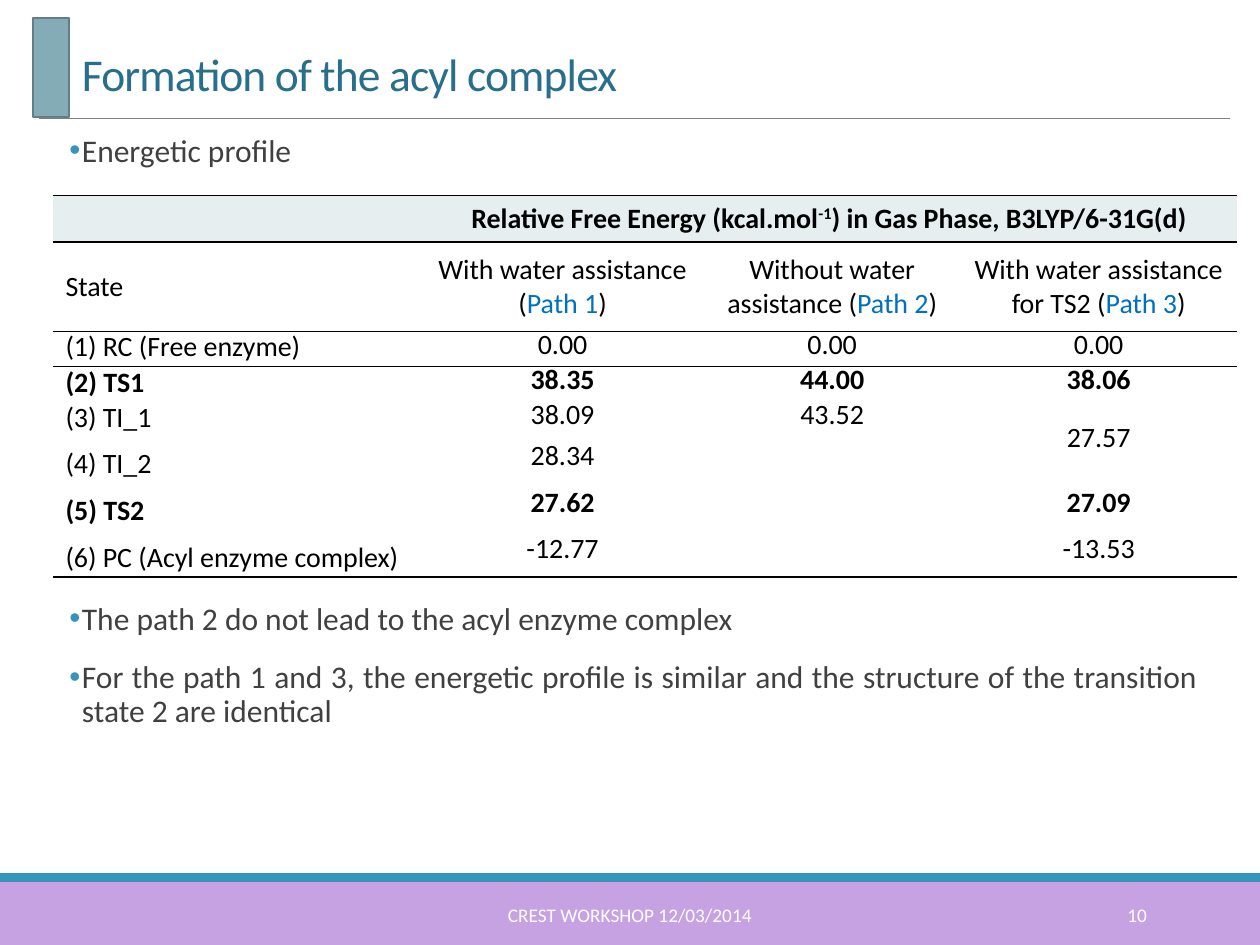
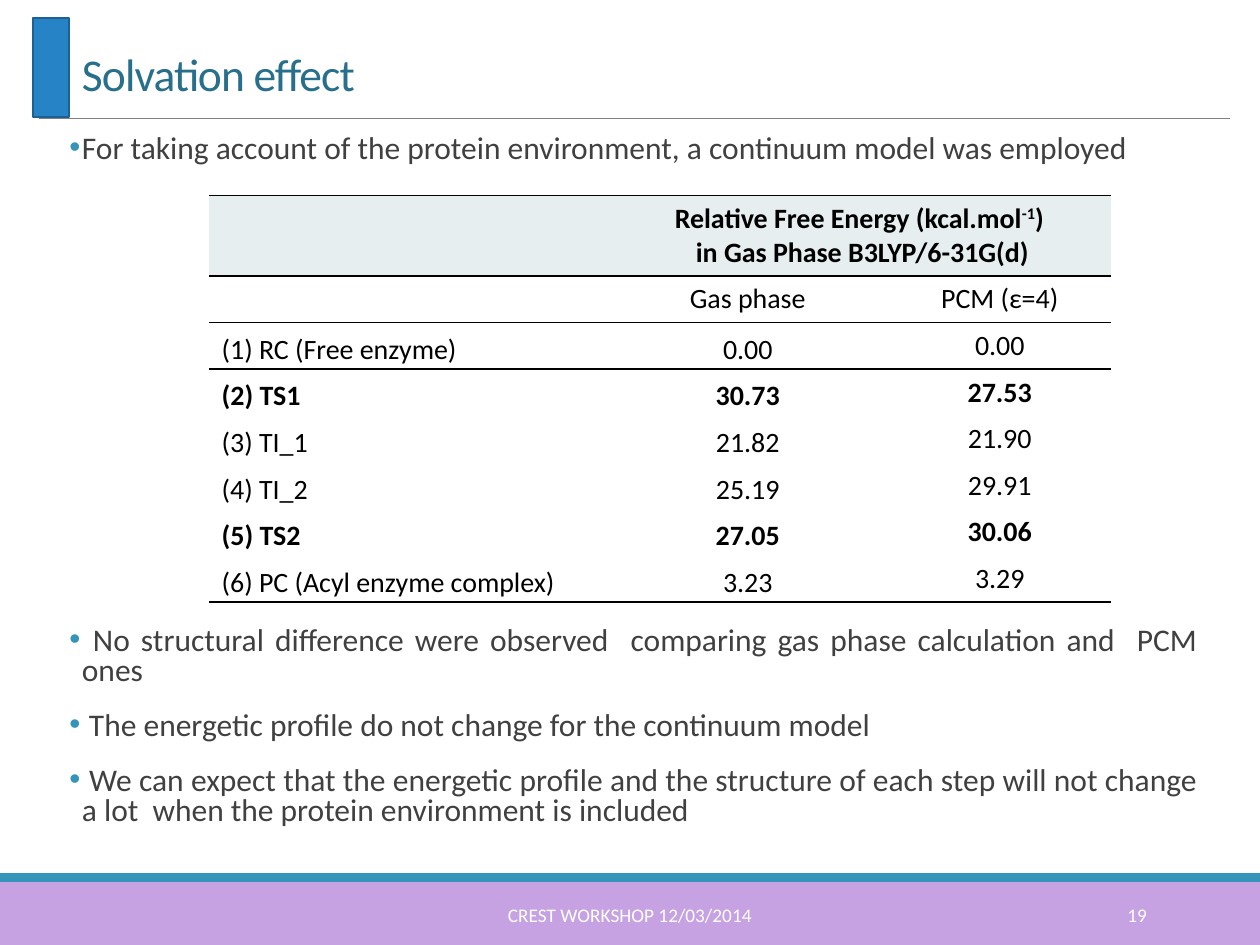
"""Build two slides on the energy profile of an acyl enzyme complex."""
from lxml.etree import SubElement
from pptx import Presentation
from pptx.dml.color import RGBColor
from pptx.enum.shapes import MSO_CONNECTOR, MSO_SHAPE
from pptx.enum.text import MSO_ANCHOR as ANCHOR, MSO_AUTO_SIZE, PP_ALIGN as ALIGN
from pptx.oxml.ns import qn
from pptx.util import Inches, Pt

FONT = "Calibri"
TITLE, BODY, BLACK, WHITE = "276F8B", "404040", "000000", "FFFFFF"
BLUE, PURPLE, GREY = "3494BA", "C7A2E3", "808080"
PATH_BLUE, HEADER_FILL = "0070C0", "E6EEF0"
NO_GRID_STYLE = "{2D5ABB26-0587-4C30-8999-92F81FD0307C}"
FOOTER = "CREST WORKSHOP 12/03/2014"


def color(hex_code):
    """Turn a hex string into a colour."""
    return RGBColor.from_string(hex_code)


def add_run(paragraph, text, size, hex_code, bold=False):
    """Add one formatted run and return it."""
    run = paragraph.add_run()
    run.text = text
    run.font.name, run.font.size, run.font.bold = FONT, Pt(size), bold
    run.font.color.rgb = color(hex_code)
    return run


slides = [
    {
        "title": "Formation of the acyl complex",
        "number": "10",
        "tab": ("84ACB6", "627F87"),
        "line_spacing": 0.9,
        "table_gap": 246,
        "bullets": [
            "Energetic profile",
            "The path 2 do not lead to the acyl enzyme complex",
            "For the path 1 and 3, the energetic profile is similar and the "
            "structure of the transition state 2 are identical",
        ],
        "table_left": 0.42,
        "columns": [(2.92, ANCHOR.BOTTOM, 0.5), (2.25, ANCHOR.MIDDLE, 0.5),
                    (2.03, ANCHOR.MIDDLE, 0.5), (2.2, ANCHOR.MIDDLE, 0.5)],
        "heights": [0.37, 0.71] + [0.28] * 3 + [0.37] * 3,
        "header": [["Relative Free Energy (kcal.mol", "-1", ") in Gas Phase, B3LYP/6-31G(d)"]],
        "subheads": [["State"],
                     ["With water assistance (", "Path 1", ")"],
                     ["Without water assistance (", "Path 2", ")"],
                     ["With water assistance for TS2 (", "Path 3", ")"]],
        "states": [
            ("(1) RC (Free enzyme)", "0.00", "0.00", "0.00"),
            ("(2) TS1", "38.35", "44.00", "38.06"),
            ("(3) TI_1", "38.09", "43.52", "27.57"),
            ("(4) TI_2", "28.34", "", ""),
            ("(5) TS2", "27.62", "", "27.09"),
            ("(6) PC (Acyl enzyme complex)", "-12.77", "", "-13.53"),
        ],
        "merges": [((0, 1), (0, 3)), ((4, 3), (5, 3))],
    },
    {
        "title": "Solvation effect",
        "number": "19",
        "tab": ("2683C6", "1C6192"),
        "line_spacing": 0.8,
        "table_gap": 262,
        "bullets": [
            "For taking account of the protein environment, a continuum model was employed",
            " No structural difference were observed  comparing gas phase calculation and  PCM ones",
            " The energetic profile do not change for the continuum model",
            " We can expect that the energetic profile and the structure of each step "
            "will not change a lot  when the protein environment is included",
        ],
        "table_left": 1.66,
        "columns": [(3.16, ANCHOR.BOTTOM, 0.5), (2.23, ANCHOR.BOTTOM, 0.5),
                    (1.77, ANCHOR.MIDDLE, 1.0)],
        "heights": [0.64] + [0.37] * 7,
        "header": [["Relative Free Energy (kcal.mol", "-1", ")"],
                   [" in Gas Phase B3LYP/6-31G(d)"]],
        "subheads": [[], ["Gas phase"], ["PCM (ε=4)"]],
        "states": [
            ("(1) RC (Free enzyme)", "0.00", "0.00"),
            ("(2) TS1", "30.73", "27.53"),
            ("(3) TI_1", "21.82", "21.90"),
            ("(4) TI_2", "25.19", "29.91"),
            ("(5) TS2", "27.05", "30.06"),
            ("(6) PC (Acyl enzyme complex)", "3.23", "3.29"),
        ],
        "merges": [((0, 1), (0, 2))],
    },
]

presentation = Presentation()
presentation.slide_width, presentation.slide_height = Inches(10), Inches(7.5)

for content in slides:
    slide = presentation.slides.add_slide(presentation.slide_layouts[1])
    tab_fill, tab_line = content["tab"]

    for left, top, width, height, fill, line in [
        (0, 7, 10, 0.5, PURPLE, None),
        (0, 6.93, 10, 0.07, BLUE, None),
        (0.26, 0.14, 0.29, 0.79, tab_fill, tab_line),
    ]:
        shape = slide.shapes.add_shape(
            MSO_SHAPE.RECTANGLE, Inches(left), Inches(top), Inches(width), Inches(height))
        shape.shadow.inherit = False
        shape.fill.solid()
        shape.fill.fore_color.rgb = color(fill)
        if line:
            shape.line.color.rgb = color(line)
            shape.line.width = Pt(1.25)
        else:
            shape.line.fill.background()

    rule = slide.shapes.add_connector(
        MSO_CONNECTOR.STRAIGHT, Inches(0.31), Inches(0.94), Inches(9.76), Inches(0.94))
    rule.line.color.rgb = color(GREY)
    rule.line.width = Pt(0.5)
    SubElement(rule._element.spPr, qn("a:effectLst"))

    title = slide.shapes.title
    title.left, title.top, title.width, title.height = map(Inches, (0.55, 0.31, 8.96, 0.54))
    title.text_frame.vertical_anchor = ANCHOR.BOTTOM
    title.text_frame.auto_size = MSO_AUTO_SIZE.NONE
    paragraph = title.text_frame.paragraphs[0]
    paragraph.alignment, paragraph.line_spacing = ALIGN.LEFT, 0.85
    run = add_run(paragraph, content["title"], 26, TITLE)
    run._r.get_or_add_rPr().set("spc", "-50")

    body = slide.placeholders[1]
    body.left, body.top, body.width, body.height = map(Inches, (0.55, 1.02, 8.96, 5.7))
    frame = body.text_frame
    frame.margin_left = frame.margin_right = 0
    frame.auto_size = MSO_AUTO_SIZE.NONE
    for index, text in enumerate(content["bullets"]):
        paragraph = frame.add_paragraph() if index else frame.paragraphs[0]
        paragraph.alignment = ALIGN.JUSTIFY
        paragraph.line_spacing = content["line_spacing"]
        paragraph.space_before = Pt(content["table_gap"] if index == 1 else 12)
        paragraph.space_after = Pt(2)
        properties = paragraph._p.get_or_add_pPr()
        properties.set("marL", str(Inches(0.1)))
        properties.set("indent", str(Inches(-0.1)))
        SubElement(SubElement(properties, qn("a:buClr")), qn("a:srgbClr"), val=BLUE)
        SubElement(properties, qn("a:buChar"), char="•")
        add_run(paragraph, text, 18, BODY)

    for left, width, text, alignment in [
        (3.02, 3.96, FOOTER, ALIGN.CENTER),
        (8.12, 1.08, content["number"], ALIGN.RIGHT),
    ]:
        box = slide.shapes.add_textbox(Inches(left), Inches(7.06), Inches(width), Inches(0.4))
        box.text_frame.word_wrap = True
        box.text_frame.vertical_anchor = ANCHOR.MIDDLE
        paragraph = box.text_frame.paragraphs[0]
        paragraph.alignment = alignment
        add_run(paragraph, text, 11, WHITE)

    columns, heights = content["columns"], content["heights"]
    table = slide.shapes.add_table(
        len(heights), len(columns), Inches(content["table_left"]), Inches(1.55),
        Inches(sum(column[0] for column in columns)), Inches(sum(heights))).table
    table.first_row = table.horz_banding = False
    table._tbl.tblPr.find(qn("a:tableStyleId")).text = NO_GRID_STYLE
    for column, (width, _, _) in zip(table.columns, columns):
        column.width = Inches(width)
    for row, height in zip(table.rows, heights):
        row.height = Inches(height)
    for first, last in content["merges"]:
        table.cell(*first).merge(table.cell(*last))

    last_row = len(heights) - 1
    for row in range(len(heights)):
        for column, (_, anchor, spacing) in enumerate(columns):
            cell = table.cell(row, column)
            if row == 0:
                lines = content["header"] if column == 1 else [[]]
            elif row == 1:
                lines = [content["subheads"][column]]
            else:
                text = content["states"][row - 2][column]
                lines = [[text] if text else []]
            bold = row == 0 or (row > 1 and "TS" in content["states"][row - 2][0])
            cell.vertical_anchor = anchor if row > 1 else ANCHOR.MIDDLE

            for index, pieces in enumerate(lines):
                frame = cell.text_frame
                paragraph = frame.add_paragraph() if index else frame.paragraphs[0]
                paragraph.alignment = ALIGN.CENTER if column else ALIGN.LEFT
                if row > 1 and pieces:
                    paragraph.line_spacing = spacing
                for piece in pieces:
                    hex_code = PATH_BLUE if piece.startswith("Path") else BLACK
                    run = add_run(paragraph, piece, 16, hex_code, bold)
                    if piece == "-1":
                        run._r.get_or_add_rPr().set("baseline", "30000")
                if not pieces:
                    SubElement(paragraph._p, qn("a:endParaRPr"), sz="1600")

            edges = {"a:lnT": row in (0, 1, 2), "a:lnB": row in (0, 1, last_row)}
            for edge, drawn in edges.items():
                if drawn:
                    border = SubElement(cell._tc.get_or_add_tcPr(), qn(edge), w=str(Pt(1)))
                    SubElement(SubElement(border, qn("a:solidFill")), qn("a:srgbClr"), val=BLACK)
            if row == 0:
                cell.fill.solid()
                cell.fill.fore_color.rgb = color(HEADER_FILL)
            else:
                cell.fill.background()

presentation.save("out.pptx")
